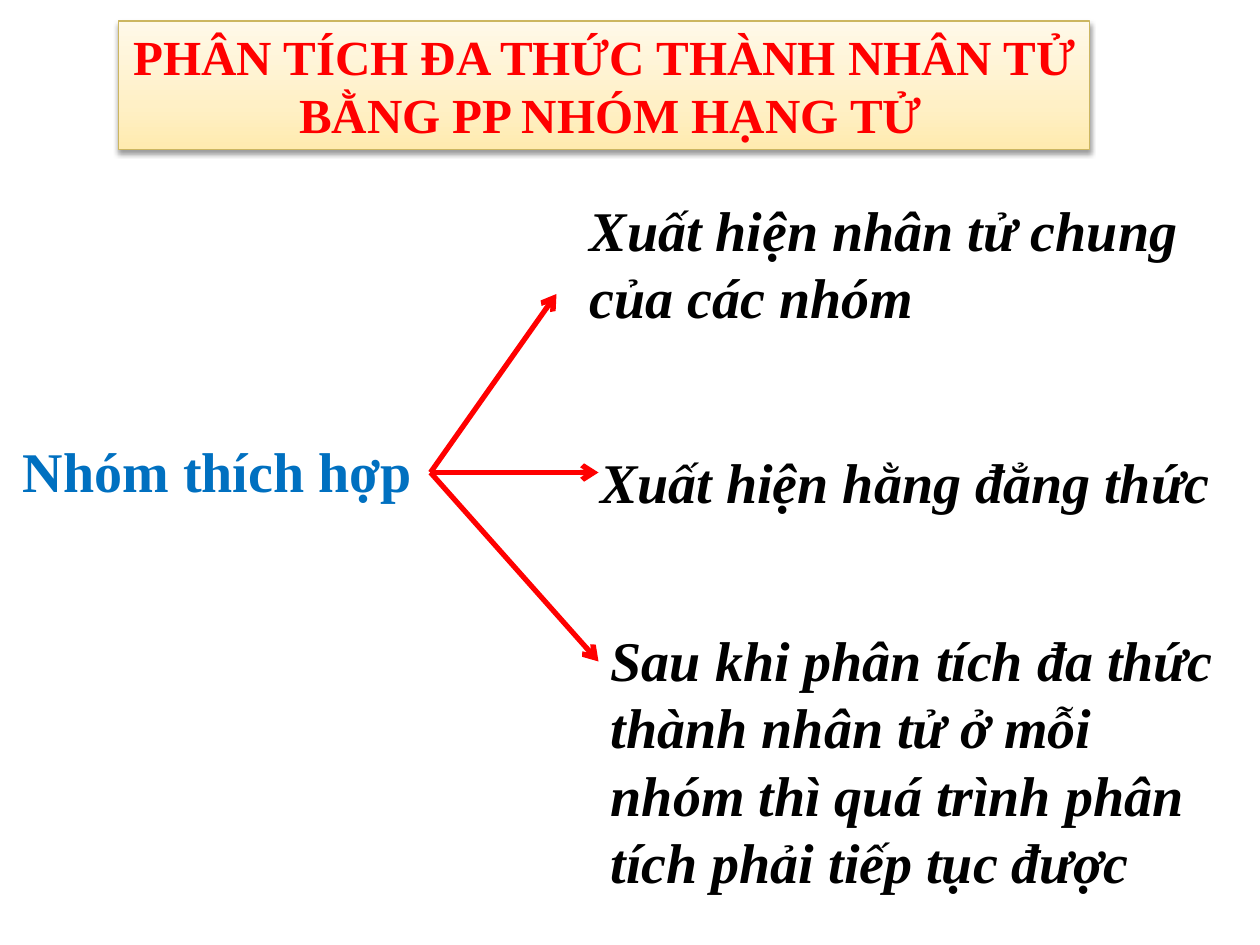
import copy

import pptx
import pptx.util
import pptx.dml.color
import pptx.enum.dml
import pptx.enum.shapes
import pptx.enum.text
import pptx.oxml
import pptx.oxml.ns
from lxml import etree

Inches, Pt = pptx.util.Inches, pptx.util.Pt
RGB = pptx.dml.color.RGBColor
RED = RGB(0xFF, 0x00, 0x00)
BLUE = RGB(0x00, 0x70, 0xC0)
BLACK = RGB(0x00, 0x00, 0x00)
GOLD = RGB(0xCC, 0xB6, 0x61)
CREAMS = [(0, RGB(0xFF, 0xEB, 0xAF)), (0.35, RGB(0xFF, 0xF0, 0xC6)),
          (1, RGB(0xFF, 0xF9, 0xE9))]
qn = pptx.oxml.ns.qn

deck = pptx.Presentation()
deck.slide_width, deck.slide_height = Inches(10), Inches(7.5)
UNIT = deck.slide_width // 120  # grid of 120 columns by 90 rows
slide = deck.slides.add_slide(deck.slide_layouts[5])


def style(para, size, color, italic=None):
    font = para.font
    font.name, font.size, font.bold, font.italic = "Times New Roman", Pt(size), True, italic
    font.color.rgb = color


# Title banner
title = slide.shapes.title
title.left, title.top = Inches(0.94), 2 * UNIT
title.width, title.height = Inches(7.71), Inches(1.02)
title.fill.gradient()
title.fill.gradient_angle = 90
first = title.fill._fill._gradFill.gsLst[0]
first.addnext(copy.deepcopy(first))
for stop, (pos, color) in zip(title.fill.gradient_stops, CREAMS):
    stop.position, stop.color.rgb = pos, color
title.line.color.rgb, title.line.width = GOLD, Pt(0.75)
title._element.spPr.append(pptx.oxml.parse_xml(
    '<a:effectLst xmlns:a="http://schemas.openxmlformats.org/drawingml/2006/main">'
    '<a:outerShdw blurRad="39370" dist="20320" dir="5400000" rotWithShape="0">'
    '<a:srgbClr val="000000"><a:alpha val="38000"/></a:srgbClr>'
    '</a:outerShdw></a:effectLst>'))
frame = title.text_frame
frame.text = "PHÂN TÍCH ĐA THỨC THÀNH NHÂN TỬ\n BẰNG PP NHÓM HẠNG TỬ"
frame.margin_left = frame.margin_right = Inches(0.07)
frame.margin_top = frame.margin_bottom = Inches(0.04)
frame.word_wrap = False
frame.auto_size = pptx.enum.text.MSO_AUTO_SIZE.SHAPE_TO_FIT_TEXT
frame.vertical_anchor = pptx.enum.text.MSO_ANCHOR.TOP
for para in frame.paragraphs:
    para.alignment = pptx.enum.text.PP_ALIGN.CENTER
    style(para, 28, RED)

# Root idea and its three outcomes: column, row, columns wide
notes = [
    (1, 41, 106, "Nhóm thích hợp", BLUE, None),
    (55, 18, 61, "Xuất hiện nhân tử chung của các nhóm", BLACK, True),
    (56, 42, 61, "Xuất hiện hằng đẳng thức", BLACK, True),
    (57, 59, 61, "Sau khi phân tích đa thức thành nhân tử ở mỗi nhóm "
                 "thì quá trình phân tích phải tiếp tục được", BLACK, True),
]
for col, row, wide, text, color, italic in notes:
    box = slide.shapes.add_textbox(col * UNIT, row * UNIT, wide * UNIT, 16 * UNIT)
    box.text_frame.word_wrap = True
    para = box.text_frame.paragraphs[0]
    para.text = text
    para.space_before = Pt(3.6)
    style(para, 32, color, italic)

# Arrows fan out from the root idea
for col, row in [(53, 28), (57, 45), (57, 63)]:
    arrow = slide.shapes.add_connector(
        pptx.enum.shapes.MSO_CONNECTOR.STRAIGHT,
        41 * UNIT, 45 * UNIT, col * UNIT, row * UNIT)
    arrow.line.color.rgb, arrow.line.width = RED, Pt(3)
    etree.SubElement(arrow.line._get_or_add_ln(), qn("a:tailEnd"), type="arrow")
    etree.SubElement(arrow._element.spPr, qn("a:effectLst"))

deck.save("out.pptx")
